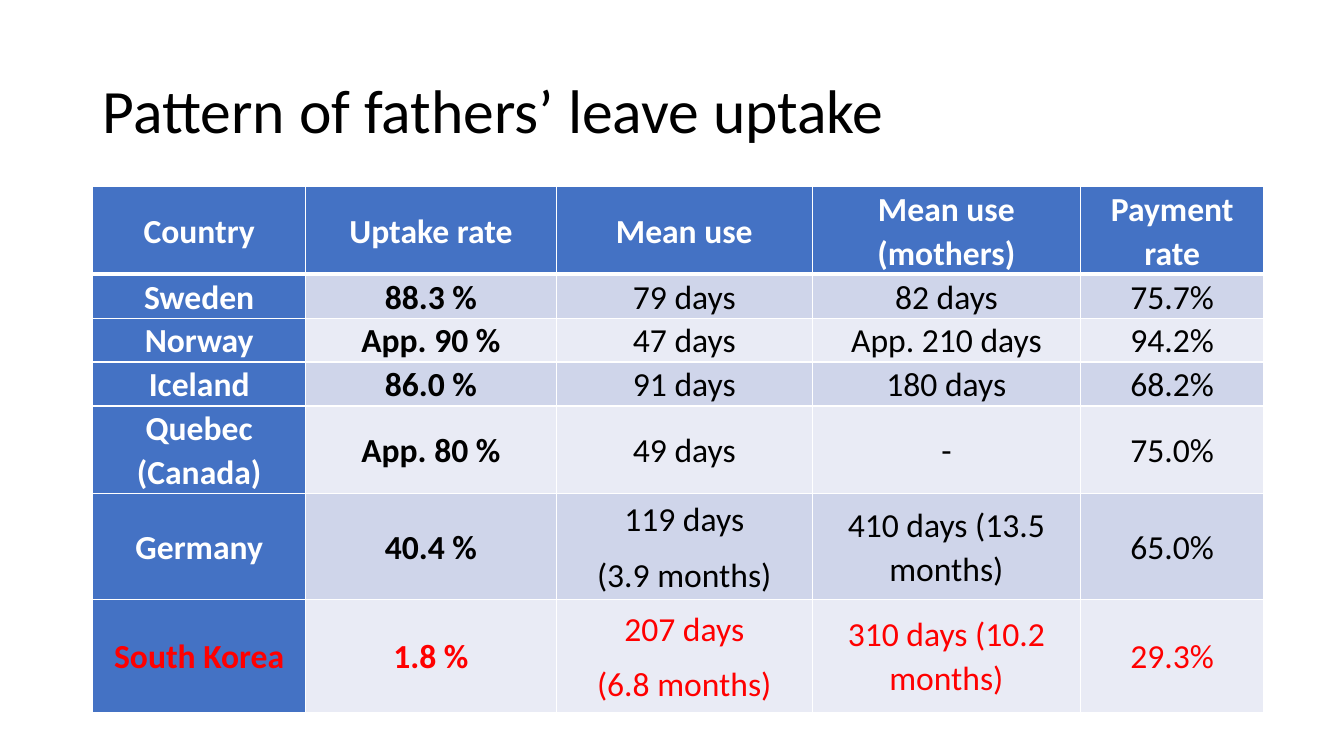
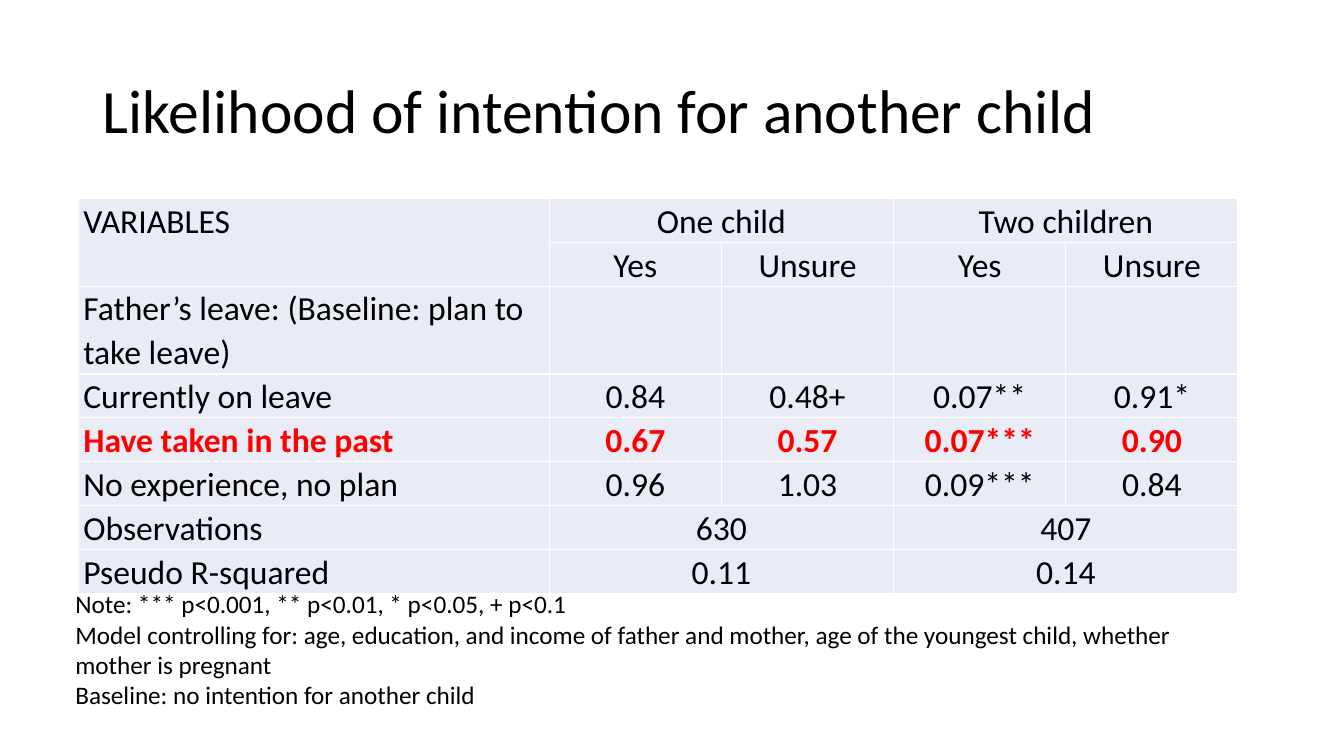
import dataclasses

import pptx
import pptx.dml.color
import pptx.enum.text
import pptx.oxml
import pptx.oxml.ns
import pptx.util

Cm, Pt = pptx.util.Cm, pptx.util.Pt
RGB = pptx.dml.color.RGBColor.from_string
ALIGN = pptx.enum.text.PP_ALIGN
ANCHOR = pptx.enum.text.MSO_ANCHOR
AUTO_SIZE = pptx.enum.text.MSO_AUTO_SIZE


@dataclasses.dataclass(frozen=True)
class Theme:
    """Colours, font and type sizes of the deck."""
    font: str = "Calibri"
    text: str = "000000"
    white: str = "FFFFFF"
    accent: str = "FF0000"
    header: str = "4472C4"
    band_dark: str = "CFD5EA"
    band_light: str = "E9EBF5"
    title_size: int = 44
    table_size: int = 24
    note_size: int = 18


theme = Theme()


def add_text(p, text, size, color=theme.text, bold=False):
    """Add one formatted run to paragraph p."""
    r = p.add_run()
    r.text = text
    r.font.name = theme.font
    r.font.size = Pt(size)
    r.font.bold = bold
    r.font.color.rgb = RGB(color)


def style_cell(cell, text, fill, inset, anchor, align, color, bold, top=1, bottom=1):
    """Fill a table cell, draw its borders and write its lines of text."""
    cell.fill.solid()
    cell.fill.fore_color.rgb = RGB(fill)
    cell.margin_left = cell.margin_right = Cm(inset)
    cell.margin_top = cell.margin_bottom = 0
    cell.vertical_anchor = anchor
    tc_pr = cell._tc.get_or_add_tcPr()
    borders = {"lnL": 1, "lnR": 1, "lnT": top, "lnB": bottom}
    for i, (tag, width) in enumerate(borders.items()):
        tc_pr.insert(i, pptx.oxml.parse_xml(
            f'<a:{tag} {pptx.oxml.ns.nsdecls("a")} w="{Pt(width)}"><a:solidFill>'
            f'<a:srgbClr val="{theme.white}"/></a:solidFill></a:{tag}>'))
    if not text:
        return
    tf = cell.text_frame
    for i, line in enumerate(text.split("\n")):
        p = tf.add_paragraph() if i else tf.paragraphs[0]
        p.alignment = align
        p.line_spacing = 1.07
        p.space_after = Pt(8)
        add_text(p, line, theme.table_size, color, bold)


prs = pptx.Presentation()
prs.slide_width, prs.slide_height = Cm(33.87), Cm(19.05)

uptake_rows = [
    ["Country", "Uptake rate", "Mean use", "Mean use (mothers)", "Payment rate"],
    ["Sweden", "88.3 %", "79 days", "82 days", "75.7%"],
    ["Norway", "App. 90 %", "47 days", "App. 210 days", "94.2%"],
    ["Iceland", "86.0 %", "91 days", "180 days", "68.2%"],
    ["Quebec (Canada)", "App. 80 %", "49 days", "-", "75.0%"],
    ["Germany", "40.4 %", "119 days\n(3.9 months)", "410 days (13.5 months)", "65.0%"],
    ["South Korea", "1.8 %", "207 days\n(6.8 months)", "310 days (10.2 months)", "29.3%"],
]
intention_rows = [
    ["VARIABLES", "One child", "", "Two children", ""],
    ["", "Yes", "Unsure", "Yes", "Unsure"],
    ["Father’s leave: (Baseline: plan to take leave)", "", "", "", ""],
    ["Currently on leave", "0.84", "0.48+", "0.07**", "0.91*"],
    ["Have taken in the past", "0.67", "0.57", "0.07***", "0.90"],
    ["No experience, no plan", "0.96", "1.03", "0.09***", "0.84"],
    ["Observations", "630", "", "407", ""],
    ["Pseudo R-squared", "0.11", "", "0.14", ""],
]
pages = [
    ("Pattern of fathers’ leave uptake", uptake_rows, (2.34, 4.7),
     [5.36, 6.32, 6.45, 6.76, 4.62], [2.2, 1.1, 1.1, 1.1, 2.2, 2.67, 2.84]),
    ("Likelihood of intention for another child", intention_rows, (1.98, 5),
     [11.86] + [4.34] * 4, [1.1, 1.1, 2.2] + [1.1] * 5),
]

# Titles and empty tables
slides, tables = [], []
for title, rows, (left, top), widths, heights in pages:
    s = prs.slides.add_slide(prs.slide_layouts[5])
    sp = s.shapes.title
    sp.left, sp.top, sp.width, sp.height = Cm(2.34), Cm(1.02), Cm(29.21), Cm(3.68)
    tf = sp.text_frame
    tf.auto_size = AUTO_SIZE.NONE
    tf.vertical_anchor = ANCHOR.MIDDLE
    p = tf.paragraphs[0]
    p.alignment = ALIGN.LEFT
    p.line_spacing = 0.9
    add_text(p, title, theme.title_size)

    table = s.shapes.add_table(len(rows), len(widths), Cm(left), Cm(top),
                               Cm(sum(widths)), Cm(sum(heights))).table
    table.horz_banding = False
    for column, width in zip(table.columns, widths):
        column.width = Cm(width)
    for row, height in zip(table.rows, heights):
        row.height = Cm(height)
    slides.append(s)
    tables.append(table)

uptake, intention = tables

# Leave uptake by country
uptake.first_col = True
for i, row in enumerate(uptake_rows):
    for j, text in enumerate(row):
        head = i == 0 or j == 0
        band = theme.band_dark if i % 2 else theme.band_light
        color = theme.white if head else theme.text
        if row[0] == "South Korea":
            color = theme.accent
        style_cell(uptake.cell(i, j), text, theme.header if head else band, 0.18,
                   ANCHOR.MIDDLE, ALIGN.CENTER, color, head or j == 1,
                   top=3 if i == 1 else 1, bottom=3 if i == 0 else 1)

# Intention for another child
intention.first_row = False
intention.cell(0, 0).merge(intention.cell(1, 0))
for i in (0, 6, 7):
    for j in (1, 3):
        intention.cell(i, j).merge(intention.cell(i, j + 1))
for i, row in enumerate(intention_rows):
    past = row[0] == "Have taken in the past"
    for j, text in enumerate(row):
        style_cell(intention.cell(i, j), text, theme.band_light, 0.12, ANCHOR.TOP,
                   ALIGN.CENTER if j else ALIGN.LEFT,
                   theme.accent if past else theme.text, past)

# Notes under the intention table
notes = [
    "Note: *** p<0.001, ** p<0.01, * p<0.05, + p<0.1",
    "Model controlling for: age, education, and income of father and mother, "
    "age of the youngest child, whether mother is pregnant",
    "Baseline: no intention for another child",
]
sp = slides[1].shapes.add_textbox(Cm(1.65), Cm(14.71), Cm(29.9), Cm(4.11))
tf = sp.text_frame
tf.word_wrap = True
for i, note in enumerate(notes):
    p = tf.add_paragraph() if i else tf.paragraphs[0]
    add_text(p, note, theme.note_size)

prs.save("out.pptx")
